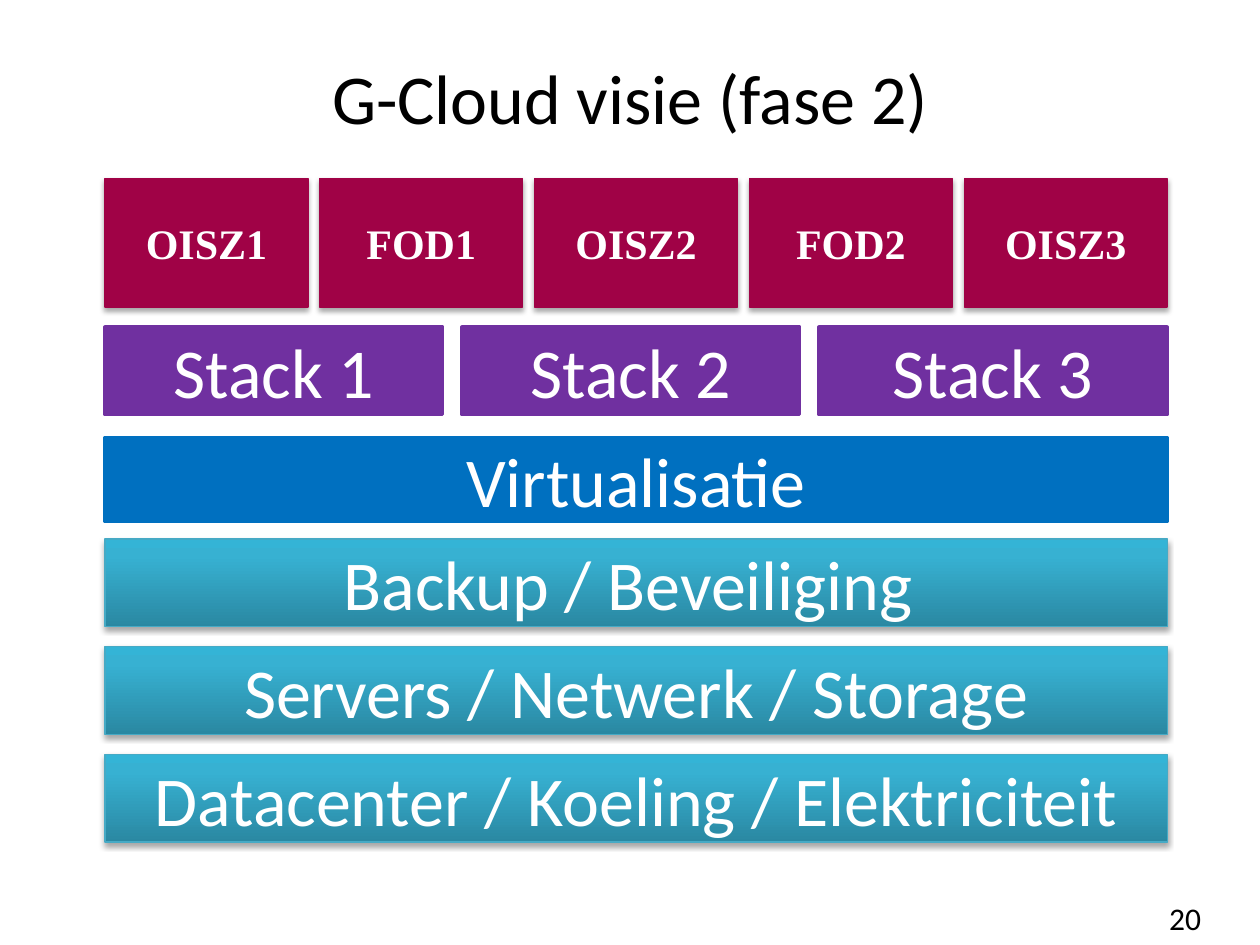
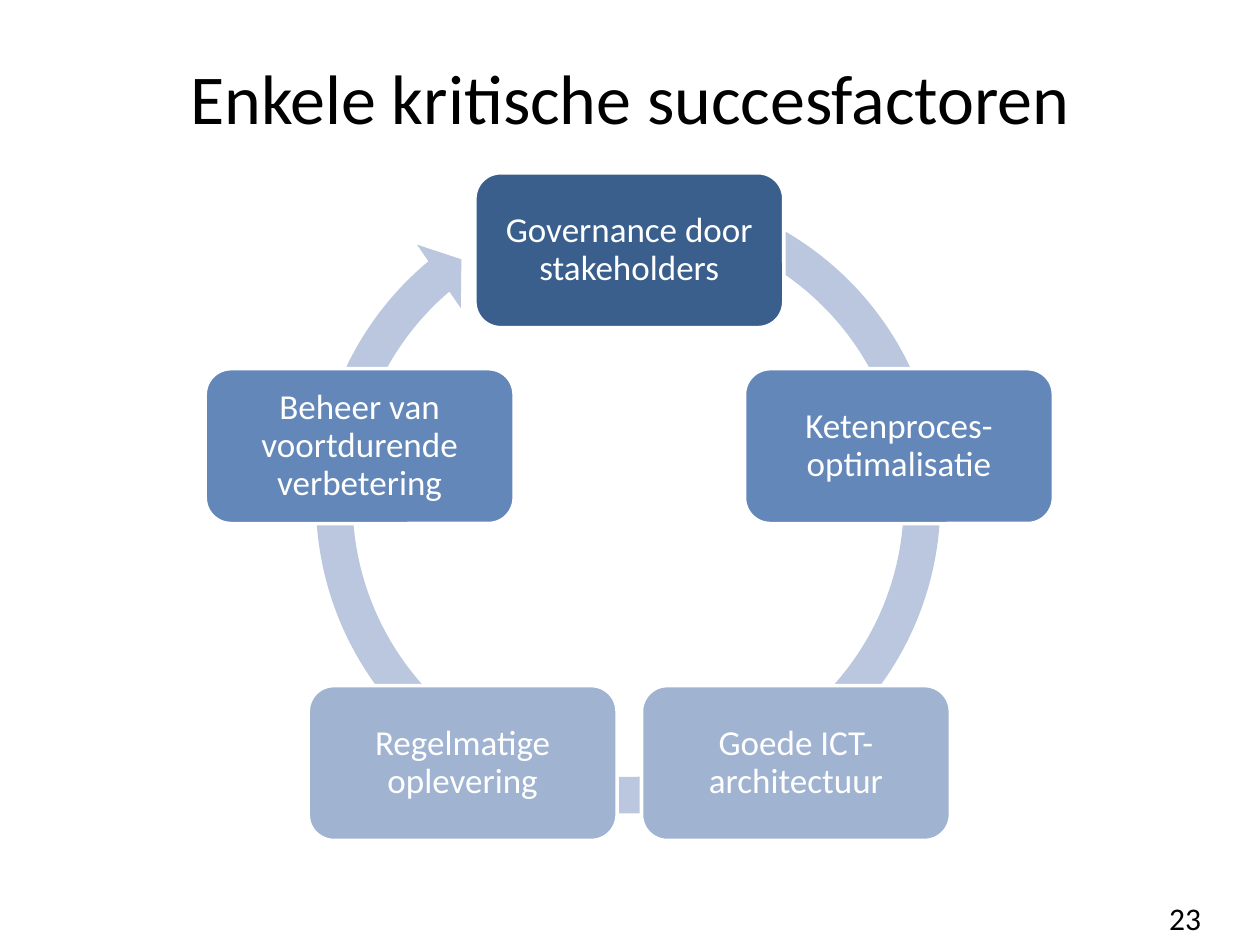
import copy
import math

from lxml import etree
from pptx import Presentation
from pptx.dml import color
from pptx.enum import shapes, text
from pptx.oxml import ns
from pptx.util import Pt

MAROON, PURPLE, BLUE = "A00246", "7030A0", "0070C0"
WHITE, BLACK = "FFFFFF", "000000"
TEAL_LINE, RING = "46AAC5", "BBC7DE"
TEAL_STOPS = ((0, "2A88A2"), (0.8, "37B1D2"), (1, "34B4D6"))
DARK, MEDIUM, LIGHT = "3A5F8C", "6387B9", "A0B3D1"


def rgb(value):
    return color.RGBColor.from_string(value)


def write(shape, words, size=40, font="Calibri", ink=WHITE, bold=False,
          align=text.PP_ALIGN.CENTER, anchor=text.MSO_ANCHOR.MIDDLE,
          inset=None, line_spacing=None):
    frame = shape.text_frame
    frame.word_wrap = True
    frame.vertical_anchor = anchor
    if inset is not None:
        frame.margin_left = frame.margin_right = Pt(inset)
        frame.margin_top = frame.margin_bottom = Pt(inset)
    paragraph = frame.paragraphs[0]
    paragraph.text = words
    paragraph.alignment = align
    paragraph.line_spacing = line_spacing
    paragraph.font.name = font
    paragraph.font.size = Pt(size)
    paragraph.font.bold = bold
    paragraph.font.color.rgb = rgb(ink)


class Deck:
    def __init__(self):
        self.presentation = Presentation()
        self.presentation.slide_width = Pt(720)
        self.presentation.slide_height = Pt(540)
        self.slide = None

    def start_slide(self, title, number):
        layout = self.presentation.slide_layouts[6]
        self.slide = self.presentation.slides.add_slide(layout)
        write(self.text_box(20, 10, 680, 90), title, ink=BLACK)
        write(self.text_box(661, 510, 59, 21), number, size=18, ink=BLACK,
              align=text.PP_ALIGN.LEFT, anchor=text.MSO_ANCHOR.TOP)

    def text_box(self, left, top, width, height):
        return self.slide.shapes.add_textbox(
            Pt(left), Pt(top), Pt(width), Pt(height))

    def block(self, left, top, width, height, fill, line=None, line_width=2,
              kind=shapes.MSO_SHAPE.RECTANGLE):
        shape = self.slide.shapes.add_shape(
            kind, Pt(left), Pt(top), Pt(width), Pt(height))
        shape.shadow.inherit = False
        shape.fill.solid()
        shape.fill.fore_color.rgb = rgb(fill)
        if line:
            shape.line.color.rgb = rgb(line)
            shape.line.width = Pt(line_width)
        else:
            shape.line.fill.background()
        return shape

    def raised_block(self, left, top, width, height, fill, line):
        shape = self.block(left, top, width, height, fill, line, 0.75)
        effects = shape.element.spPr.find(ns.qn("a:effectLst"))
        shadow = etree.SubElement(
            effects, ns.qn("a:outerShdw"), blurRad=str(Pt(3.1)),
            dist=str(Pt(1.8)), dir="5400000", rotWithShape="0")
        shade = etree.SubElement(shadow, ns.qn("a:srgbClr"), val=BLACK)
        etree.SubElement(shade, ns.qn("a:alpha"), val="35000")
        return shape

    def gradient_block(self, left, top, width, height, stops, line):
        shape = self.raised_block(left, top, width, height, stops[0][1], line)
        shape.fill.gradient()
        shape.fill.gradient_angle = 90
        stop_list = shape.element.spPr.find(".//" + ns.qn("a:gsLst"))
        stop_list.append(copy.deepcopy(stop_list[-1]))
        for stop, (position, value) in zip(shape.fill.gradient_stops, stops):
            stop.position = position
            stop.color.rgb = rgb(value)
        return shape

    def card(self, center_x, center_y, words, fill):
        width, height = 176.5, 88.5
        shape = self.block(center_x - width / 2, center_y - height / 2,
                           width, height, fill, WHITE,
                           kind=shapes.MSO_SHAPE.ROUNDED_RECTANGLE)
        write(shape, words, size=20, inset=6, line_spacing=0.9)

    def ring_arrow(self, left, top, size, adjustments, fill):
        shape = self.block(left, top, size, size, fill,
                           kind=shapes.MSO_SHAPE.CIRCULAR_ARROW)
        for index, percent in enumerate(adjustments):
            shape.adjustments[index] = percent / 100


def add_vision(deck):
    deck.start_slide("G-Cloud visie (fase 2)", "20")
    left, width = 60, 607

    layers = ("Backup / Beveiliging ", "Servers / Netwerk / Storage",
              "Datacenter / Koeling / Elektriciteit")
    for index, layer in enumerate(layers):
        band = deck.gradient_block(left, 308 + 61.6 * index, width, 50,
                                   TEAL_STOPS, TEAL_LINE)
        write(band, layer)

    write(deck.block(left, 250, width, 48, BLUE, BLUE), "Virtualisatie")

    tenants = ("OISZ1", "FOD1", "OISZ2", "FOD2", "OISZ3")
    tenant_width = 116
    tenant_pitch = (width - tenant_width) / (len(tenants) - 1)
    for index, tenant in enumerate(tenants):
        box = deck.raised_block(left + tenant_pitch * index, 102,
                                tenant_width, 73.5, MAROON, MAROON)
        write(box, tenant, size=24, font="Times New Roman", bold=True)

    for index, stack_width in enumerate((193, 193, 199)):
        stack = deck.block(left + 204 * index, 187, stack_width, 50,
                           PURPLE, PURPLE)
        write(stack, f"Stack {index + 1}")


def add_success_factors(deck):
    deck.start_slide("Enkele kritische succesfactoren", "23")
    deck.ring_arrow(169, 96.5, 380,
                    (5.5, 330.7, 13794.8, 17374.5, 5.8), RING)
    factors = (
        ("Governance door stakeholders", DARK),
        ("Ketenproces-optimalisatie", MEDIUM),
        ("Goede ICT-architectuur", LIGHT),
        ("Regelmatige oplevering", LIGHT),
        ("Beheer van voortdurende verbetering", MEDIUM),
    )
    radius = 162
    for index, (factor, fill) in enumerate(factors):
        angle = math.tau * index / len(factors)
        deck.card(359.6 + radius * math.sin(angle),
                  305 - radius * math.cos(angle), factor, fill)


def main():
    deck = Deck()
    add_vision(deck)
    add_success_factors(deck)
    deck.presentation.save("out.pptx")


if __name__ == "__main__":
    main()
